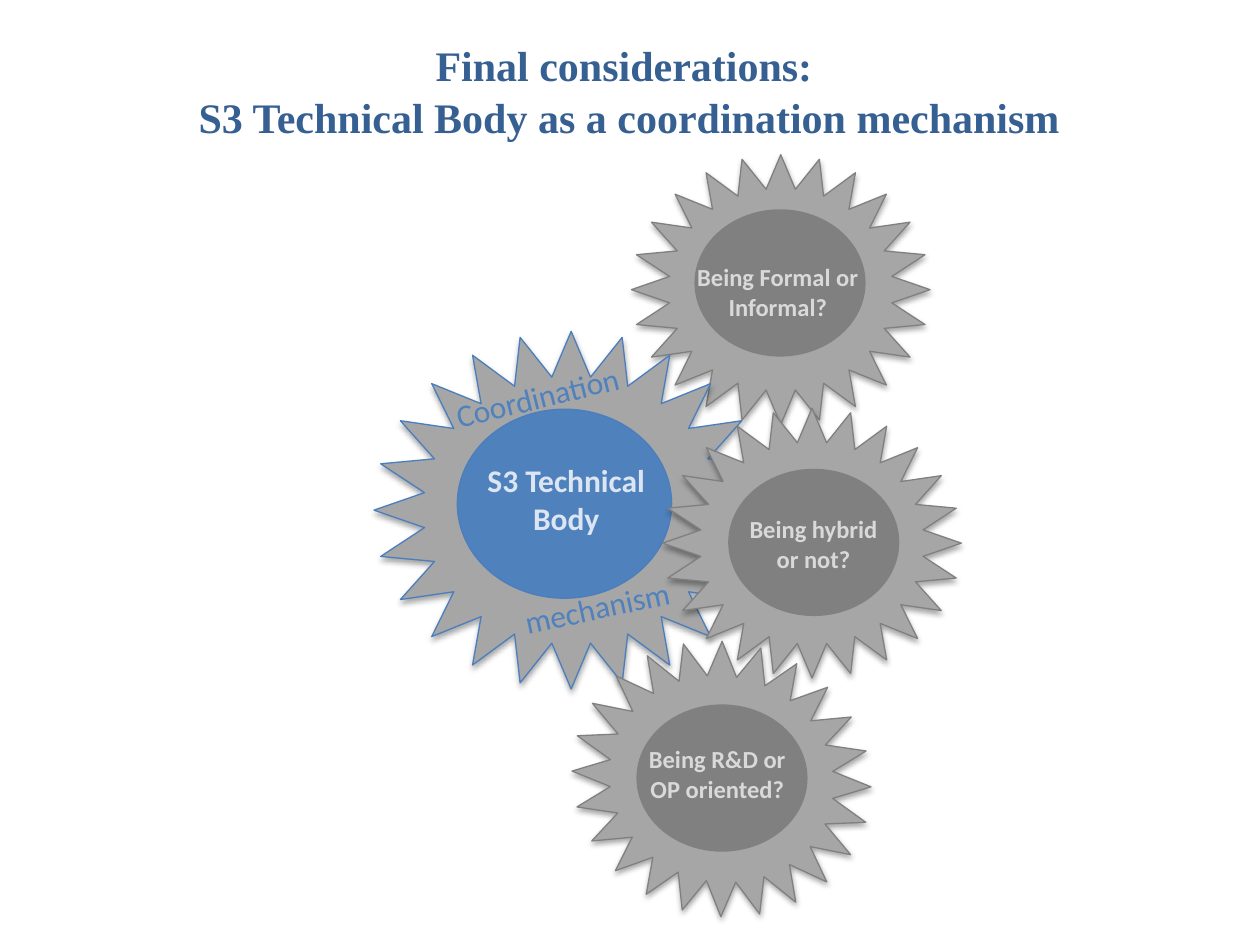
import pptx
import pptx.dml.color
import pptx.enum.shapes
import pptx.enum.text
import pptx.oxml
import pptx.oxml.ns
import pptx.util
from pptx.util import Cm

COLORS = {
    "title": "376092", "gear": "A6A6A6", "grey": "808080", "blue": "4F81BD",
    "blue_line": "4B7EBC", "pale_blue": "DCE6F2", "pale_grey": "D9D9D9",
}
SHADOW = (
    f'<a:outerShdw {pptx.oxml.ns.nsdecls("a")} blurRad="40000" dist="23000" dir="5400000" '
    'rotWithShape="0"><a:srgbClr val="000000"><a:alpha val="35000"/></a:srgbClr></a:outerShdw>'
)
STAR = pptx.enum.shapes.MSO_SHAPE.STAR_24_POINT
OVAL = pptx.enum.shapes.MSO_SHAPE.OVAL
CENTER = pptx.enum.text.PP_ALIGN.CENTER
LEFT = pptx.enum.text.PP_ALIGN.LEFT


def format_text(text_frame, size, color, font_name, bold, alignment):
    text_frame.word_wrap = True
    for paragraph in text_frame.paragraphs:
        paragraph.alignment = alignment
        for run in paragraph.runs:
            run.font.size = pptx.util.Pt(size)
            run.font.name = font_name
            run.font.bold = bold
            run.font.color.rgb = pptx.dml.color.RGBColor.from_string(COLORS[color])


presentation = pptx.Presentation()
presentation.slide_width = Cm(25.4)
presentation.slide_height = Cm(19.05)
slide = presentation.slides.add_slide(presentation.slide_layouts[5])

title = slide.shapes.title
title.left, title.top, title.width, title.height = Cm(1.09), Cm(0.61), Cm(23.19), Cm(2.31)
title.text_frame.text = "Final considerations: \nS3 Technical Body as a coordination mechanism"
title.text_frame.vertical_anchor = pptx.enum.text.MSO_ANCHOR.TOP
format_text(title.text_frame, 24, "title", "Times New Roman", True, CENTER)
for paragraph in title.text_frame.paragraphs:
    paragraph.line_spacing = 1.05

gear_parts = [
    (STAR, 12.73, 3.12, 6.02, 5.44, 0, "gear", "grey"),
    (STAR, 7.54, 6.68, 7.95, 7.21, 0, "gear", "blue_line"),
    (OVAL, 9.22, 8.25, 4.32, 3.81, 0, "blue", "blue_line"),
    (STAR, 13.36, 8.23, 6.02, 5.44, 0, "gear", "grey"),
    (STAR, 11.51, 12.95, 6.07, 5.51, 16.7, "gear", "grey"),
    (OVAL, 14.68, 9.45, 3.45, 2.97, 0, "grey", None),
    (OVAL, 14.0, 4.22, 3.45, 2.97, 0, "grey", None),
    (OVAL, 12.83, 14.2, 3.45, 2.97, 0, "grey", None),
]
for kind, left, top, width, height, rotation, fill, line in gear_parts:
    shape = slide.shapes.add_shape(kind, Cm(left), Cm(top), Cm(width), Cm(height))
    shape.rotation = rotation
    shape.fill.solid()
    shape.fill.fore_color.rgb = pptx.dml.color.RGBColor.from_string(COLORS[fill])
    if line:
        shape.line.color.rgb = pptx.dml.color.RGBColor.from_string(COLORS[line])
        shape.line.width = pptx.util.Pt(0.75)
    else:
        shape.line.fill.background()
    shape.shadow.inherit = False
    if kind == STAR:
        effects = shape._element.spPr.find(pptx.oxml.ns.qn("a:effectLst"))
        effects.append(pptx.oxml.parse_xml(SHADOW))

labels = [
    ("S3 Technical Body", 9.22, 9.17, 4.39, 1.8, 0, 18, "pale_blue", True, CENTER),
    ("mechanism", 10.29, 11.58, 4.88, 1.02, 347.9, 18, "blue", False, LEFT),
    ("Coordination", 8.89, 7.37, 4.88, 1.02, 346.1, 18, "blue", False, LEFT),
    ("Being hybrid or not?", 14.81, 10.24, 3.18, 1.45, 0, 14, "pale_grey", True, CENTER),
    ("Being Formal or Informal?", 13.61, 5.16, 4.14, 1.5, 0, 14, "pale_grey", True, CENTER),
    ("Being R&D or OP oriented?", 12.57, 14.88, 3.78, 1.45, 0, 14, "pale_grey", True, CENTER),
]
for text, left, top, width, height, rotation, size, color, bold, alignment in labels:
    label = slide.shapes.add_textbox(Cm(left), Cm(top), Cm(width), Cm(height))
    label.rotation = rotation
    label.text_frame.text = text
    format_text(label.text_frame, size, color, "Calibri", bold, alignment)

presentation.save("out.pptx")
